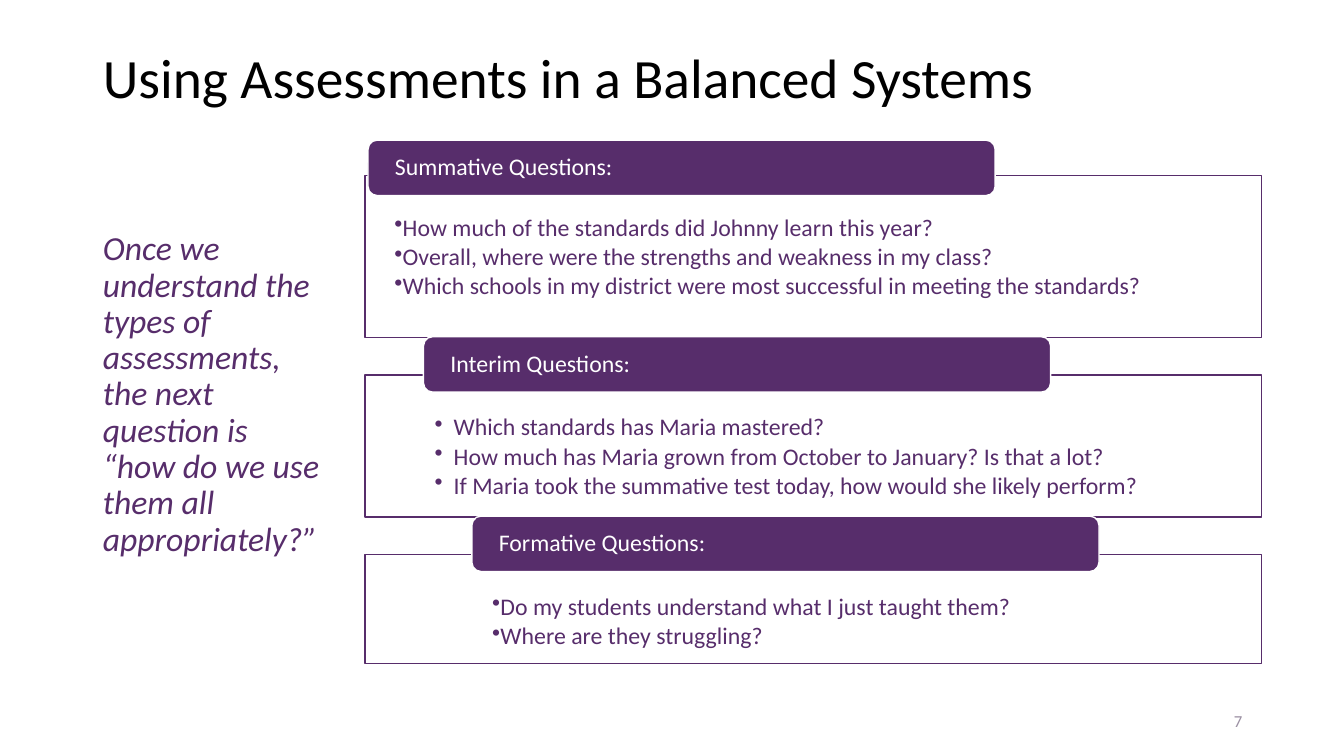
from dataclasses import dataclass

from lxml.etree import SubElement
from pptx import Presentation
from pptx.dml.color import RGBColor
from pptx.enum.shapes import MSO_SHAPE
from pptx.enum.text import MSO_ANCHOR, MSO_AUTO_SIZE, PP_ALIGN
from pptx.oxml.ns import qn
from pptx.util import Inches, Pt


@dataclass(frozen=True)
class Theme:
    font: str = "Calibri"
    black: RGBColor = RGBColor(0x00, 0x00, 0x00)
    white: RGBColor = RGBColor(0xFF, 0xFF, 0xFF)
    purple: RGBColor = RGBColor(0x57, 0x2D, 0x6B)
    muted: RGBColor = RGBColor(0x9A, 0x8F, 0xA2)
    title_size: float = 39.6
    quote_size: float = 24
    question_size: float = 17
    number_size: float = 12
    panel_opacity: int = 90


@dataclass(frozen=True)
class Panel:
    """One group of questions; lengths in inches, relative to the panel box."""
    heading: str
    questions: tuple
    top: float
    height: float
    tab_left: float
    tab_rise: float
    text_left: float
    hanging: float = 0


THEME = Theme()
PANEL_LEFT, PANEL_WIDTH = 3.62, 8.89
TAB_WIDTH, TAB_HEIGHT = 6.22, 0.55

PANELS = (
    Panel("Summative Questions:", (
        "How much of the standards did Johnny learn this year?",
        "Overall, where were the strengths and weakness in my class?",
        "Which schools in my district were most successful in meeting the standards?",
    ), top=1.74, height=1.61, tab_left=0.03, tab_rise=0.35, text_left=0.29),
    Panel("Interim Questions:", (
        "Which standards has Maria mastered?",
        "How much has Maria grown from October to January? Is that a lot?",
        "If Maria took the summative test today, how would she likely perform?",
    ), top=3.72, height=1.41, tab_left=0.58, tab_rise=0.38, text_left=0.88, hanging=0.19),
    Panel("Formative Questions:", (
        "Do my students understand what I just taught them?",
        "Where are they struggling?",
    ), top=5.5, height=1.08, tab_left=1.06, tab_rise=0.38, text_left=1.26),
)


def set_attributes(target, values):
    for name, value in values.items():
        setattr(target, name, value)


def place(shape, box):
    names = ("left", "top", "width", "height")
    set_attributes(shape, dict(zip(names, map(Inches, box))))


def write_text(shape, lines, size, color, frame_format=None, line_format=None, italic=False):
    frame = shape.text_frame
    set_attributes(frame, {
        "word_wrap": True, "auto_size": MSO_AUTO_SIZE.NONE,
        "vertical_anchor": MSO_ANCHOR.TOP, **(frame_format or {}),
    })
    frame.text = "\n".join(lines)
    for paragraph in frame.paragraphs:
        set_attributes(paragraph, {
            "alignment": PP_ALIGN.LEFT, "line_spacing": 0.9,
            "space_before": Pt(0), **(line_format or {}),
        })
        set_attributes(paragraph.font, {"name": THEME.font, "size": Pt(size), "italic": italic})
        paragraph.font.color.rgb = color


def set_bullet(paragraph, left=0, hanging=0, character=None):
    properties = paragraph._p.get_or_add_pPr()
    properties.set("marL", str(Inches(left)))
    properties.set("indent", str(-Inches(hanging)))
    if character:
        SubElement(properties, qn("a:buChar")).set("char", character)
    else:
        SubElement(properties, qn("a:buNone"))


def add_box(slide, kind, box, fill, line):
    shape = slide.shapes.add_shape(kind, *map(Inches, box))
    shape.shadow.inherit = False
    shape.fill.solid()
    shape.fill.fore_color.rgb = fill
    shape.line.color.rgb = line
    shape.line.width = Pt(1)
    return shape


def set_opacity(shape, percent):
    color = shape.fill._xPr.find(qn("a:solidFill"))[0]
    SubElement(color, qn("a:alpha")).set("val", str(percent * 1000))


def add_title(slide, box):
    title = slide.shapes.title
    place(title, box)
    write_text(title, ["Using Assessments in a Balanced Systems"],
               THEME.title_size, THEME.black, {"margin_top": 0})


def add_quote(slide, box):
    quote = slide.placeholders[1]
    place(quote, box)
    write_text(quote, [
        "Once we understand the types of assessments, the next question is "
        "“how do we use them all appropriately?”"
    ], THEME.quote_size, THEME.purple, italic=True)
    set_bullet(quote.text_frame.paragraphs[0])


def add_panel(slide, panel, left, width):
    """Draw a bordered question list with its heading tab across the top edge."""
    body = add_box(slide, MSO_SHAPE.RECTANGLE, (left, panel.top, width, panel.height),
                   THEME.white, THEME.purple)
    set_opacity(body, THEME.panel_opacity)
    write_text(body, panel.questions, THEME.question_size, THEME.purple,
               {"margin_left": 0, "margin_top": Inches(0.4)}, {"space_after": Pt(2.5)})
    for paragraph in body.text_frame.paragraphs:
        set_bullet(paragraph, panel.text_left, panel.hanging, "•")

    tab_box = (left + panel.tab_left, panel.top - panel.tab_rise, TAB_WIDTH, TAB_HEIGHT)
    tab = add_box(slide, MSO_SHAPE.ROUNDED_RECTANGLE, tab_box, THEME.purple, THEME.white)
    write_text(tab, [panel.heading], THEME.question_size, THEME.white, {
        "vertical_anchor": MSO_ANCHOR.MIDDLE, "margin_left": Inches(0.24),
        "margin_top": 0, "margin_bottom": 0,
    })


def add_slide_number(slide, box):
    number = slide.shapes.add_textbox(*map(Inches, box))
    write_text(number, ["7"], THEME.number_size, THEME.muted,
               {"vertical_anchor": MSO_ANCHOR.MIDDLE},
               {"alignment": PP_ALIGN.RIGHT, "line_spacing": 1.0})


def main():
    presentation = Presentation()
    presentation.slide_width = Inches(13.33)
    presentation.slide_height = Inches(7.5)
    slide = presentation.slides.add_slide(presentation.slide_layouts[1])
    add_title(slide, (0.92, 0.5, 11.5, 1.1))
    add_quote(slide, (0.92, 2.25, 2.43, 4.17))
    add_slide_number(slide, (9.42, 6.95, 3, 0.4))
    for panel in PANELS:
        add_panel(slide, panel, PANEL_LEFT, PANEL_WIDTH)
    presentation.save("out.pptx")


if __name__ == "__main__":
    main()
